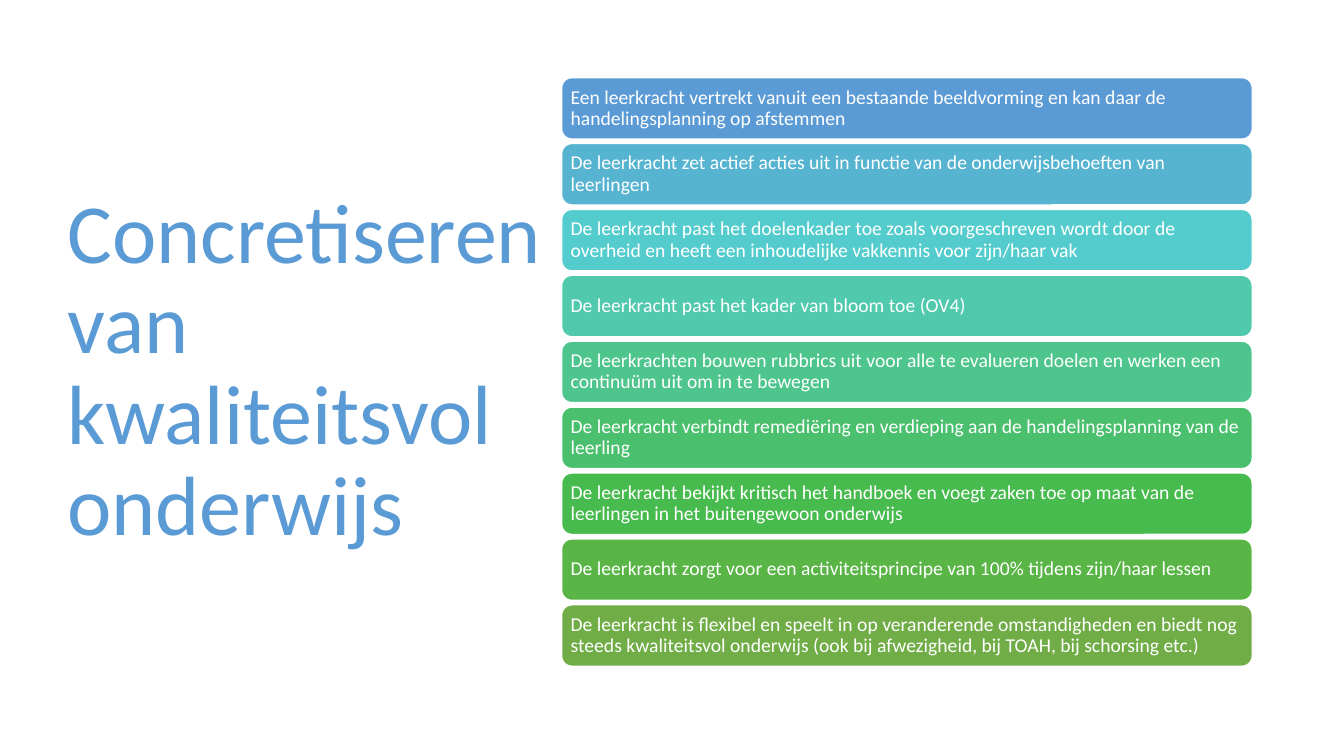
from pptx import Presentation
from pptx.dml.color import RGBColor
from pptx.enum.shapes import MSO_SHAPE as Shape
from pptx.enum.text import MSO_ANCHOR as Anchor, PP_ALIGN as Align
from pptx.util import Inches, Pt

TITLE = "Concretiseren van kwaliteitsvol onderwijs"
STATEMENTS = [
    ("Een leerkracht vertrekt vanuit een bestaande beeldvorming en kan daar de "
     "handelingsplanning op afstemmen", "blue"),
    ("De leerkracht zet actief acties uit in functie van de onderwijsbehoeften van "
     "leerlingen", "sky"),
    ("De leerkracht past het doelenkader toe zoals voorgeschreven wordt door de "
     "overheid en heeft een inhoudelijke vakkennis voor zijn/haar vak", "turquoise"),
    ("De leerkracht past het kader van bloom toe (OV4)", "aqua"),
    ("De leerkrachten bouwen rubbrics uit voor alle te evalueren doelen en werken een "
     "continuüm uit om in te bewegen", "mint"),
    ("De leerkracht verbindt remediëring en verdieping aan de handelingsplanning van de "
     "leerling", "emerald"),
    ("De leerkracht bekijkt kritisch het handboek en voegt zaken toe op maat van de "
     "leerlingen in het buitengewoon onderwijs", "green"),
    ("De leerkracht zorgt voor een activiteitsprincipe van 100% tijdens zijn/haar lessen",
     "leaf"),
    ("De leerkracht is flexibel en speelt in op veranderende omstandigheden en biedt nog "
     "steeds kwaliteitsvol onderwijs (ook bij afwezigheid, bij TOAH, bij schorsing etc.)",
     "olive"),
]
COLORS = {
    "white": "FFFFFF", "blue": "5B9BD5", "sky": "57B4D1", "turquoise": "54CCCD",
    "aqua": "51C9AD", "mint": "4DC58D", "emerald": "4AC06E", "green": "48BB4F",
    "leaf": "59B546", "olive": "70AD47",
}
FONT = "Calibri"
BAR_LEFT, BAR_WIDTH, BAR_HEIGHT = 5.57, 6.85, 0.61
FIRST_TOP, LAST_TOP = 0.77, 6.0
BAR_INSET = 0.06


def color(name):
    return RGBColor.from_string(COLORS[name])


def write_text(shape, text, size, color_name):
    frame = shape.text_frame
    frame.text = text
    frame.word_wrap = True
    frame.vertical_anchor = Anchor.MIDDLE
    paragraph = frame.paragraphs[0]
    paragraph.alignment = Align.LEFT
    paragraph.line_spacing = 0.9
    font = paragraph.runs[0].font
    font.name = FONT
    font.size = Pt(size)
    font.color.rgb = color(color_name)


def add_bar(slide, top, text, fill_name):
    bar = slide.shapes.add_shape(Shape.ROUNDED_RECTANGLE, Inches(BAR_LEFT), Inches(top),
                                 Inches(BAR_WIDTH), Inches(BAR_HEIGHT))
    bar.shadow.inherit = False
    bar.fill.solid()
    bar.fill.fore_color.rgb = color(fill_name)
    bar.line.color.rgb = color("white")
    bar.line.width = Pt(1)
    write_text(bar, text, 14, "white")
    frame = bar.text_frame
    frame.margin_left = frame.margin_right = Inches(BAR_INSET)
    frame.margin_top = frame.margin_bottom = Inches(BAR_INSET)


def main():
    presentation = Presentation()
    presentation.slide_width = Inches(13.33)
    presentation.slide_height = Inches(7.5)
    slide = presentation.slides.add_slide(presentation.slide_layouts[6])

    title = slide.shapes.add_textbox(Inches(0.57), Inches(0.68), Inches(5), Inches(6.02))
    write_text(title, TITLE, 60, "blue")

    pitch = (LAST_TOP - FIRST_TOP) / (len(STATEMENTS) - 1)
    for index, (text, fill_name) in enumerate(STATEMENTS):
        add_bar(slide, FIRST_TOP + index * pitch, text, fill_name)

    presentation.save("out.pptx")


if __name__ == "__main__":
    main()
